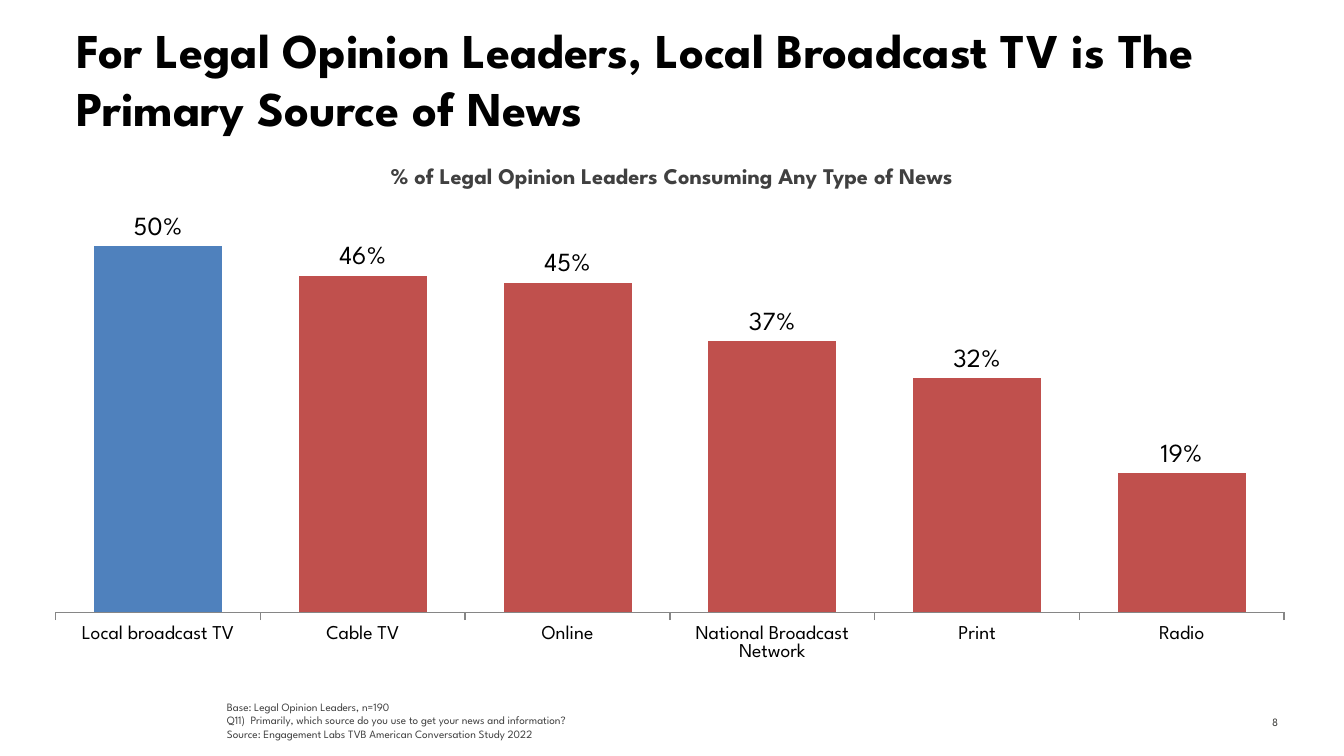
from dataclasses import dataclass

import pptx
import pptx.chart.data
import pptx.dml.color
import pptx.enum.chart
import pptx.enum.text
import pptx.util
from lxml import etree

SCALE = 4572  # EMU per px, 200 px to the inch
FONT = "League Spartan"
BLACK, GREY, BLUE, RED = "000000", "404040", "4F81BD", "C0504D"
Align = pptx.enum.text.PP_ALIGN
Anchor = pptx.enum.text.MSO_ANCHOR


@dataclass(frozen=True)
class Box:
    left: int
    top: int
    width: int
    height: int

    def emu(self) -> tuple[int, ...]:
        return tuple(px(n) for n in (self.left, self.top, self.width, self.height))


@dataclass(frozen=True)
class Bar:
    category: str
    value: float
    color: str = RED


BARS = [
    Bar("Local broadcast TV", 0.50, BLUE),
    Bar("Cable TV", 0.46),
    Bar("Online", 0.45),
    Bar("National Broadcast\nNetwork", 0.37),
    Bar("Print", 0.32),
    Bar("Radio", 0.19),
]


def px(length: int) -> int:
    return pptx.util.Emu(length * SCALE)


def rgb(color: str) -> pptx.dml.color.RGBColor:
    return pptx.dml.color.RGBColor.from_string(color)


def style_font(font, size: float, color: str, bold: bool = False) -> None:
    font.name, font.size, font.bold = FONT, pptx.util.Pt(size), bold
    font.color.rgb = rgb(color)


def add_text(slide, box: Box, text: str, *, size: float, color: str = GREY,
             bold: bool = False, align=Align.LEFT, anchor=Anchor.TOP,
             wrap: bool = True, inset_top: int = 10) -> None:
    frame = slide.shapes.add_textbox(*box.emu()).text_frame
    frame.word_wrap = wrap
    frame.vertical_anchor = anchor
    frame.margin_top = px(inset_top)
    for index, line in enumerate(text.split("\n")):
        paragraph = frame.paragraphs[0] if index == 0 else frame.add_paragraph()
        paragraph.alignment = align
        run = paragraph.add_run()
        run.text = line
        style_font(run.font, size, color, bold)


def set_plot_area(chart, **fractions: float) -> None:
    """Fix the inner plot area as fractions of the chart frame."""
    namespace = "{http://schemas.openxmlformats.org/drawingml/2006/chart}"
    plot_area = chart.plots[0]._element.getparent()
    for old in plot_area.findall(namespace + "layout"):
        plot_area.remove(old)
    layout = etree.Element(namespace + "layout")
    manual = etree.SubElement(layout, namespace + "manualLayout")
    settings = {"layoutTarget": "inner", "xMode": "edge", "yMode": "edge", **fractions}
    for name, value in settings.items():
        etree.SubElement(manual, namespace + name, val=str(value))
    plot_area.insert(0, layout)


def add_bar_chart(slide, box: Box, bars: list[Bar]) -> None:
    data = pptx.chart.data.CategoryChartData(number_format="0%")
    data.categories = [bar.category for bar in bars]
    data.add_series("Series 1", [bar.value for bar in bars])
    chart = slide.shapes.add_chart(
        pptx.enum.chart.XL_CHART_TYPE.COLUMN_CLUSTERED, *box.emu(), data).chart
    chart.has_legend = chart.has_title = False
    style_font(chart.font, 18, BLACK)
    set_plot_area(chart, x=0, y=0.137, w=1, h=0.693)

    # Axes
    values = chart.value_axis
    values.visible = values.has_major_gridlines = False
    values.minimum_scale, values.maximum_scale = 0, 0.5
    categories = chart.category_axis
    categories.major_tick_mark = pptx.enum.chart.XL_TICK_MARK.OUTSIDE
    categories.format.line.color.rgb = rgb("868686")
    style_font(categories.tick_labels.font, 10.5, BLACK)

    # Bars and their labels
    plot = chart.plots[0]
    plot.gap_width = 60
    plot.vary_by_categories = False
    series = plot.series[0]
    series.invert_if_negative = False
    series.format.fill.solid()
    series.format.fill.fore_color.rgb = rgb(RED)
    for index, bar in enumerate(bars):
        if bar.color != RED:
            fill = series.points[index].format.fill
            fill.solid()
            fill.fore_color.rgb = rgb(bar.color)
    labels = series.data_labels
    labels.show_value = True
    labels.number_format, labels.number_format_is_linked = "0%", False
    labels.position = pptx.enum.chart.XL_LABEL_POSITION.OUTSIDE_END
    style_font(labels.font, 14, BLACK)


def main() -> None:
    presentation = pptx.Presentation()
    presentation.slide_width, presentation.slide_height = px(2000), px(1125)
    slide = presentation.slides.add_slide(presentation.slide_layouts[6])

    # Page number and title
    add_text(slide, Box(1808, 1044, 118, 60), "8 ", size=6, color="3C3C3A",
             align=Align.RIGHT, anchor=Anchor.MIDDLE)
    add_text(slide, Box(94, 30, 1852, 178),
             "For Legal Opinion Leaders, Local Broadcast TV is The Primary Source of News",
             size=26, color=BLACK, bold=True, inset_top=0)

    # Chart with its heading
    add_bar_chart(slide, Box(82, 259, 1830, 786), BARS)
    add_text(slide, Box(512, 232, 976, 60),
             "% of Legal Opinion Leaders Consuming Any Type of News",
             size=12, bold=True, align=Align.CENTER, wrap=False)

    # Source notes
    add_text(slide, Box(318, 1032, 1630, 80),
             "Base: Legal Opinion Leaders, n=190\n"
             "Q11)  Primarily, which source do you use to get your news and information?\n"
             "Source: Engagement Labs TVB American Conversation Study 2022",
             size=6, anchor=Anchor.BOTTOM)

    presentation.save("out.pptx")


if __name__ == "__main__":
    main()
